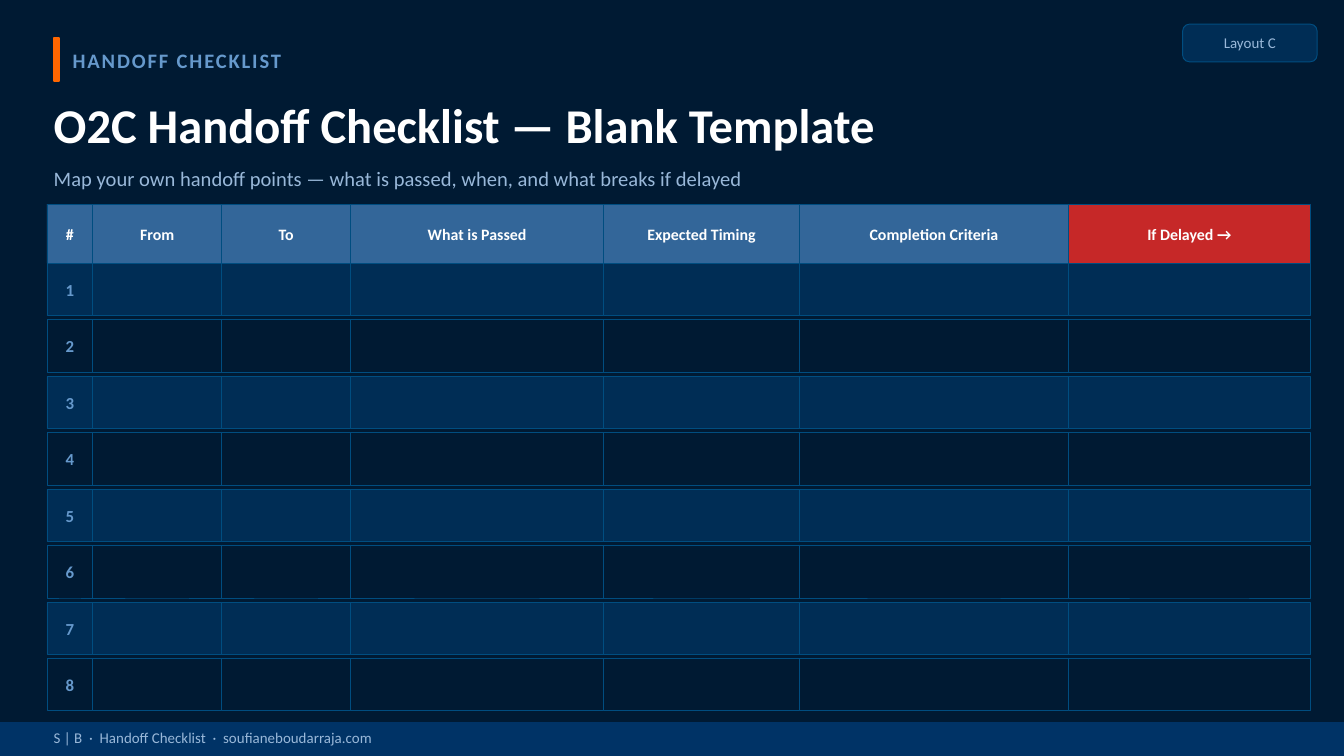
from pptx import Presentation
from pptx.dml.color import RGBColor
from pptx.enum.shapes import MSO_SHAPE
from pptx.enum.text import MSO_ANCHOR, PP_ALIGN
from pptx.util import Inches, Pt

NAVY, PANEL, EDGE = "001A33", "002D55", "004D80"
BLUE, PALE, WHITE = "6699CC", "99B8D9", "FFFFFF"


def add_box(x, y, w, h, fill, line, weight, kind=MSO_SHAPE.RECTANGLE):
    sp = s.shapes.add_shape(kind, Inches(x), Inches(y), Inches(w), Inches(h))
    sp.shadow.inherit = False
    sp.fill.solid()
    sp.fill.fore_color.rgb = RGBColor.from_string(fill)
    sp.line.color.rgb = RGBColor.from_string(line)
    sp.line.width = Pt(weight)
    return sp


def add_text(x, y, w, h, text, size, color, bold=False, align=PP_ALIGN.LEFT):
    sp = s.shapes.add_textbox(Inches(x), Inches(y), Inches(w), Inches(h))
    tf = sp.text_frame
    tf.word_wrap = True
    tf.vertical_anchor = MSO_ANCHOR.MIDDLE
    tf.margin_left = tf.margin_right = tf.margin_top = tf.margin_bottom = 0
    p = tf.paragraphs[0]
    p.alignment = align
    r = p.add_run()
    r.text = text
    p.font.name = "Calibri"
    p.font.size = Pt(size)
    p.font.bold = bold
    p.font.color.rgb = RGBColor.from_string(color)
    return r


prs = Presentation()
prs.slide_width = Inches(10)
prs.slide_height = prs.slide_width * 9 // 16
s = prs.slides.add_slide(prs.slide_layouts[6])
s.background.fill.solid()
s.background.fill.fore_color.rgb = RGBColor.from_string(NAVY)

add_box(0.4, 0.28, 0.04, 0.32, "FF6600", "FF6600", 1)
r = add_text(0.54, 0.27, 7, 0.35, "HANDOFF CHECKLIST", 11, BLUE, True)
r.font._rPr.set("spc", "100")

tag = add_box(8.8, 0.18, 1, 0.28, PANEL, EDGE, 0.5, MSO_SHAPE.ROUNDED_RECTANGLE)
tag.adjustments[0] = 0.18
add_text(8.8, 0.18, 1, 0.28, "Layout C", 8, PALE, align=PP_ALIGN.CENTER)

add_text(0.4, 0.65, 9.2, 0.55, "O2C Handoff Checklist — Blank Template", 26, WHITE, True)
add_text(0.4, 1.18, 9.2, 0.3, "Map your own handoff points — what is passed, when, and what breaks if delayed", 11, PALE)

add_box(0, 5.38, 10, 0.24, "003366", "003366", 1)
add_text(0.4, 5.39, 9.2, 0.2, "S | B  ·  Handoff Checklist  ·  soufianeboudarraja.com", 8, PALE)

columns = [
    ("#", 0.34, "336699"),
    ("From", 0.96, "336699"),
    ("To", 0.96, "336699"),
    ("What is Passed", 1.88, "336699"),
    ("Expected Timing", 1.46, "336699"),
    ("Completion Criteria", 2, "336699"),
    ("If Delayed →", 1.8, "C62828"),
]
left = 0.35
x = left
for heading, w, fill in columns:
    add_box(x, 1.52, w, 0.44, fill, EDGE, 0.5)
    add_text(x, 1.52, w, 0.44, heading, 8.5, WHITE, True, PP_ALIGN.CENTER)
    x += w

for row in range(8):
    x, y = left, 1.96 + row * 0.42
    for heading, w, _ in columns:
        add_box(x, y, w, 0.39, NAVY if row % 2 else PANEL, EDGE, 0.5)
        if heading == "#":
            add_text(x, y, w, 0.39, str(row + 1), 9, BLUE, True, PP_ALIGN.CENTER)
        x += w

prs.save("out.pptx")
